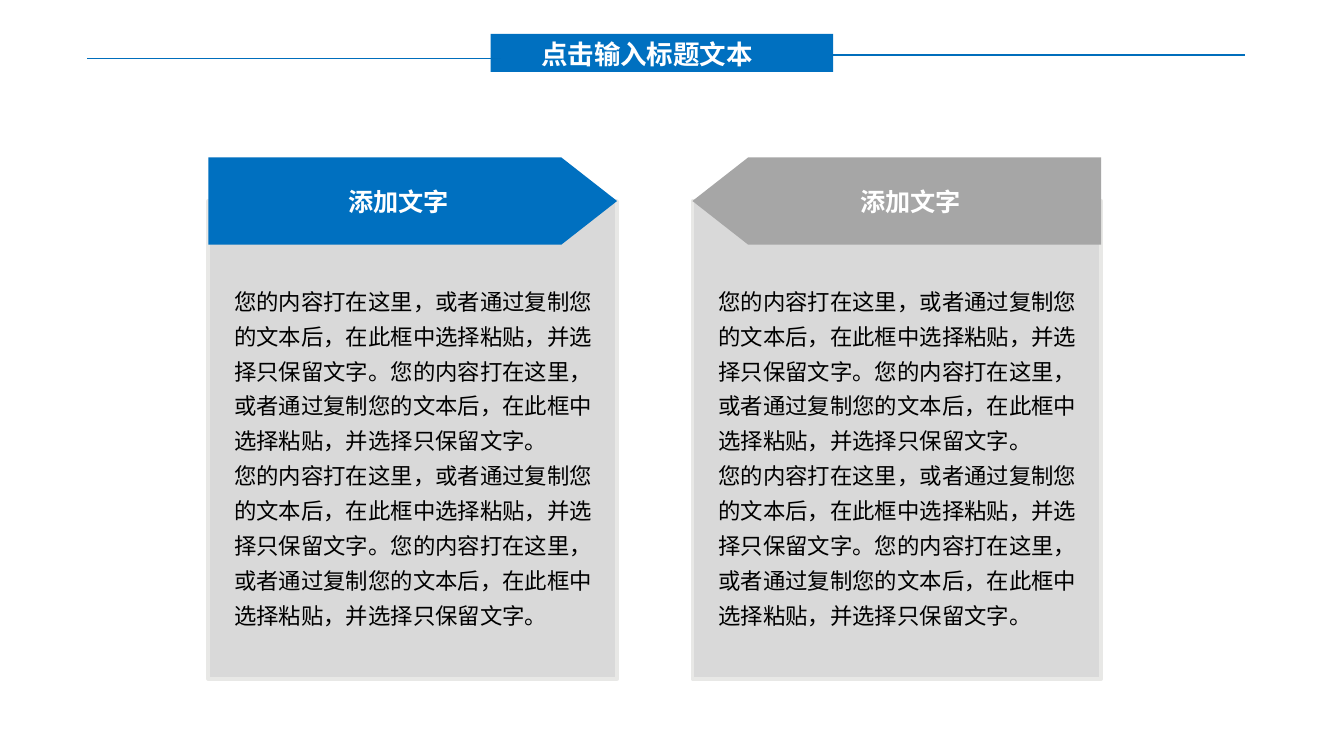
from dataclasses import dataclass

from lxml.etree import SubElement
from pptx import Presentation
from pptx.dml.color import RGBColor
from pptx.enum.shapes import MSO_CONNECTOR as Connector, MSO_SHAPE as Preset
from pptx.enum.text import MSO_ANCHOR as Anchor, PP_ALIGN as Align
from pptx.oxml.ns import qn
from pptx.util import Pt


@dataclass(frozen=True)
class Theme:
    blue: str = "0070C0"
    rule: str = "006EBC"
    gray: str = "A6A6A6"
    panel: str = "D9D9D9"
    edge: str = "E8E8E6"
    white: str = "FFFFFF"
    black: str = "000000"
    font: str = "Noto Sans CJK SC"
    title_size: float = 14.2
    heading_size: float = 13.5
    body_size: float = 12


THEME = Theme()
TITLE = "点击输入标题文本"
HEADING = "添加文字"
SENTENCE = "您的内容打在这里，或者通过复制您的文本后，在此框中选择粘贴，并选择只保留文字。"
BODY = [SENTENCE * 2] * 2


def add_block(page, preset, box, fill, edge=None):
    shape = page.shapes.add_shape(preset, *map(Pt, box))
    shape.shadow.inherit = False
    shape.fill.solid()
    shape.fill.fore_color.rgb = RGBColor.from_string(fill)
    if edge:
        shape.line.color.rgb = RGBColor.from_string(edge)
        shape.line.width = Pt(2)
    else:
        shape.line.fill.background()
    return shape


def write(frame, lines, size, color, bold=False, align=Align.LEFT, spacing=1.0, insets=(5, 3)):
    frame.margin_left = frame.margin_right = Pt(insets[0])
    frame.margin_top = frame.margin_bottom = Pt(insets[1])
    for index, line in enumerate(lines):
        para = frame.add_paragraph() if index else frame.paragraphs[0]
        para.alignment = align
        para.line_spacing = spacing
        span = para.add_run()
        span.text = line
        span.font.size = Pt(size)
        span.font.bold = bold
        span.font.color.rgb = RGBColor.from_string(color)
        span.font.name = THEME.font
        SubElement(span.font._element, qn("a:ea"), typeface=THEME.font)


def add_text(page, box, lines, size, color, **style):
    frame = page.shapes.add_textbox(*map(Pt, box)).text_frame
    frame.word_wrap = True
    write(frame, lines, size, color, **style)


def add_rule(page, left, top, width):
    rule = page.shapes.add_connector(
        Connector.STRAIGHT, Pt(left), Pt(top), Pt(left + width), Pt(top))
    rule.line.color.rgb = RGBColor.from_string(THEME.rule)
    rule.line.width = Pt(0.75)
    SubElement(rule._element.spPr, qn("a:effectLst"))


def add_title(page, box):
    left, top, width, height = box
    add_block(page, Preset.RECTANGLE, (left + 216, top, 183.6, height), THEME.blue)
    add_text(page, (left + 236, top - 1.4, 134, 24.5), [TITLE],
             THEME.title_size, THEME.white, bold=True, insets=(7.2, 3.6))
    rule_width = 221.8
    add_rule(page, left, top + 13.3, rule_width)
    add_rule(page, left + width - rule_width, top + 11.3, rule_width)


def add_card(page, box, accent, flipped):
    left, top, width, height = box
    banner_height = 46.8
    half = banner_height / 2
    add_block(page, Preset.RECTANGLE, (left, top + half, width, height - half),
              THEME.panel, THEME.edge)
    banner = add_block(page, Preset.PENTAGON, (left, top, width, banner_height), accent)
    banner.adjustments[0] = 0.639
    if flipped:
        banner._element.spPr.xfrm.set("flipH", "1")
    frame = banner.text_frame
    frame.word_wrap = False
    frame.vertical_anchor = Anchor.MIDDLE
    write(frame, [HEADING], THEME.heading_size, THEME.white, bold=True, align=Align.CENTER)
    add_text(page, (left + 8.8, top + 62.6, width - 8.8, 194.4), BODY,
             THEME.body_size, THEME.black, spacing=1.3)


def main():
    deck = Presentation()
    deck.slide_width, deck.slide_height = Pt(720), Pt(405)
    page = deck.slides.add_slide(deck.slide_layouts[6])
    for column, accent in enumerate((THEME.blue, THEME.gray)):
        add_card(page, (111.6 + column * 259.4, 84.3, 219, 279.4), accent, column == 1)
    add_title(page, (46.8, 18.2, 620, 20.4))
    deck.save("out.pptx")


if __name__ == "__main__":
    main()
